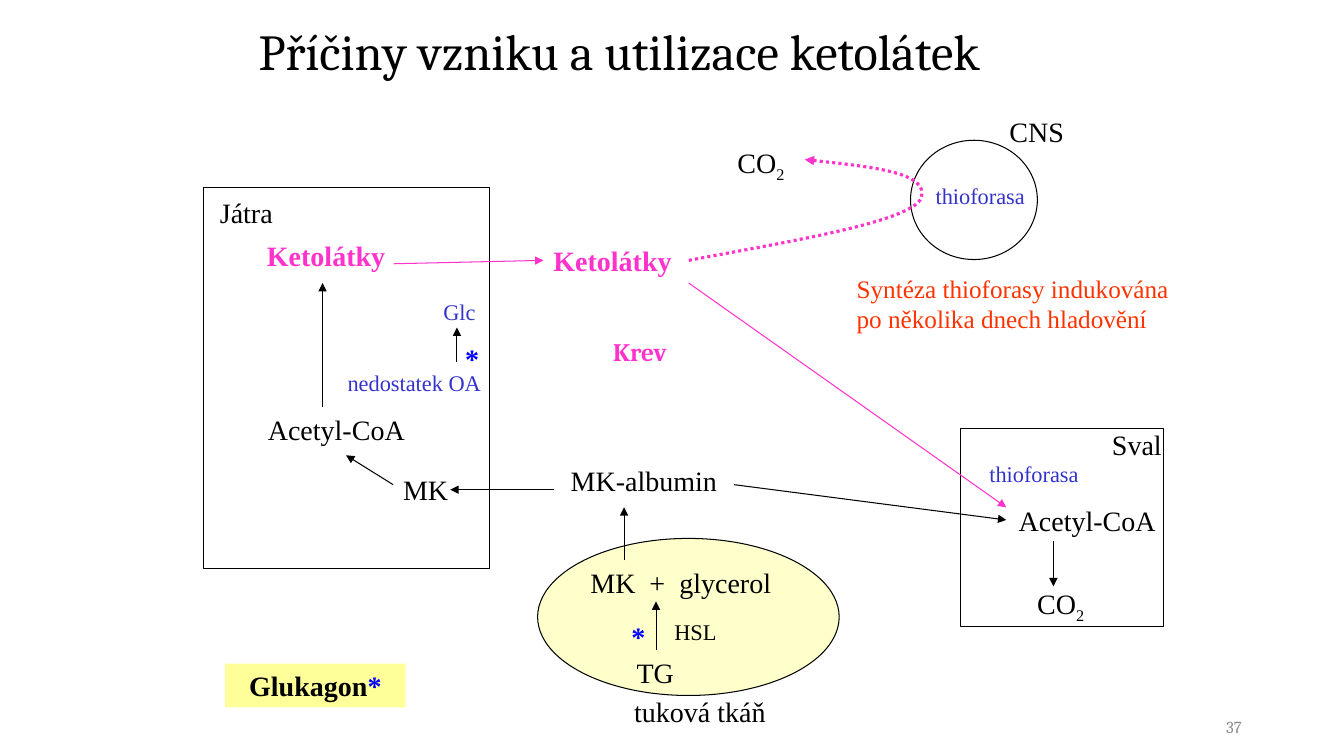
from dataclasses import dataclass
from itertools import chain
from typing import Optional

from lxml.etree import SubElement
from pptx import Presentation
from pptx.dml.color import RGBColor
from pptx.enum.dml import MSO_LINE
from pptx.enum.shapes import MSO_CONNECTOR, MSO_SHAPE
from pptx.enum.text import MSO_ANCHOR, MSO_AUTO_SIZE as AutoSize, PP_ALIGN as Align
from pptx.oxml.ns import qn
from pptx.util import Inches, Pt

COLUMNS, ROWS = 160, 90
CELL = Inches(7.5) / ROWS

BLACK = RGBColor(0x00, 0x00, 0x00)
GREY = RGBColor(0x8C, 0x8C, 0x8C)
PINK = RGBColor(0xFF, 0x33, 0xCC)
BLUE = RGBColor(0x00, 0x00, 0xFF)
INDIGO = RGBColor(0x33, 0x33, 0xCC)
ORANGE = RGBColor(0xFF, 0x33, 0x00)
CREAM = RGBColor(0xFF, 0xFF, 0xCC)
YELLOW = RGBColor(0xFF, 0xFF, 0x99)

SERIF, HEADING = "Times New Roman", "Cambria"
TOP, LEFT = 0, 1


@dataclass(frozen=True)
class Organ:
    outline: MSO_SHAPE
    column: float
    row: float
    columns: float
    rows: float
    fill: Optional[RGBColor] = None


@dataclass(frozen=True)
class Label:
    text: str
    column: float
    row: float
    columns: float
    size: int = 20
    color: RGBColor = BLACK
    bold: bool = False
    font: str = SERIF
    align: Align = Align.LEFT
    wrap: bool = False
    lines: int = 1
    subscript: str = ""

    @property
    def rows(self) -> float:
        return self.lines * self.size / 5 + 1.2


@dataclass(frozen=True)
class Arrow:
    start: tuple[float, float]
    end: tuple[float, float]
    color: RGBColor = BLACK
    source: Optional[Label] = None
    target: Optional[Label] = None


ORGANS = [
    Organ(MSO_SHAPE.RECTANGLE, 24.2, 22.3, 34.1, 45.4),
    Organ(MSO_SHAPE.RECTANGLE, 114.4, 51, 24.1, 23.6),
    Organ(MSO_SHAPE.OVAL, 108.4, 16.7, 15.1, 14.2),
    Organ(MSO_SHAPE.OVAL, 64, 64.1, 35.9, 18.7, CREAM),
]

BLOOD_KETONES = Label("Ketolátky", 64.7, 28.4, 16.6, color=PINK, bold=True)
TRIGLYCERIDES = Label("TG", 74.6, 77.4, 7)

LABELS = [
    Label("Játra", 25, 22.7, 13.2, wrap=True),
    Label("Ketolátky", 30.6, 27.8, 16.6, color=PINK, bold=True),
    Label("Glc", 51.6, 34.9, 7.1, 16, INDIGO, wrap=True),
    Label("*", 53, 40.1, 6.4, color=BLUE, bold=True, align=Align.CENTER, wrap=True),
    Label("nedostatek OA", 40.2, 43.3, 20.9, 16, INDIGO, wrap=True),
    Label("Acetyl-CoA", 30.7, 48.5, 18.8),
    Label("MK", 46.8, 55.6, 8.5, wrap=True),
    BLOOD_KETONES,
    Label("Krev", 71.8, 39.4, 9, 18, PINK, True, HEADING),
    Label("MK-albumin", 65.9, 54.6, 21.5, align=Align.CENTER, wrap=True),
    Label("CO", 86.6, 16.7, 8.3, subscript="2"),
    Label("CNS", 119, 13, 9),
    Label("thioforasa", 110.2, 21.1, 13.3, 16, INDIGO, wrap=True),
    Label("Syntéza thioforasy indukována po několika dnech hladovění",
          100.8, 31.9, 40.2, 18, ORANGE, wrap=True, lines=2),
    Label("Sval", 131.2, 50.3, 8.4),
    Label("thioforasa", 116.6, 54.2, 13.3, 16, INDIGO, wrap=True),
    Label("Acetyl-CoA", 120.1, 59.3, 18.8),
    Label("CO", 122.3, 69.2, 8.3, subscript="2"),
    Label("MK  +  glycerol", 69.1, 66.7, 24.1),
    Label("*", 72.8, 73.1, 6.4, color=BLUE, bold=True, align=Align.CENTER, wrap=True),
    Label("HSL", 75.7, 73, 14.2, 16, align=Align.CENTER, wrap=True),
    TRIGLYCERIDES,
    Label("tuková tkáň", 74.3, 82.1, 18.4),
]
GLUCAGON = Label("Glukagon", 26.8, 79, 21.5, bold=True, align=Align.CENTER, wrap=True)
PAGE_NUMBER = Label("37", 113, 84.7, 36, 12, GREY, font=HEADING,
                    align=Align.RIGHT, wrap=True)
TITLE = Label("Příčiny vzniku a utilizace ketolátek", 29.6, 2.3, 102, 36,
              font=HEADING, wrap=True)

ARROWS = [
    Arrow((46.9, 31.4), (64.7, 31.3), PINK, target=BLOOD_KETONES),
    Arrow((82, 33.7), (119.8, 60.4), PINK),
    Arrow((38.4, 48.5), (38.4, 33.7)),
    Arrow((54.4, 43.1), (54.4, 39)),
    Arrow((46.8, 57.7), (41.2, 54.2)),
    Arrow((65.9, 58.3), (53.6, 58.3)),
    Arrow((87.4, 57.7), (119.8, 61.9)),
    Arrow((74.3, 66.7), (74.3, 60.4)),
    Arrow((78.1, 77.3), (78.1, 71.6), source=TRIGLYCERIDES),
    Arrow((125.4, 64.4), (125.4, 69.8)),
]

BRAIN_PATH = [(82, 31), (92.4, 29), (108.7, 26.5), (109.7, 23.5),
              (110.5, 20.5), (103.1, 19.8), (95.8, 19)]


def cells(*counts: float) -> list[int]:
    return [round(count * CELL) for count in counts]


def format_run(run, label: Label, color: RGBColor) -> None:
    run.font.name = label.font
    run.font.size = Pt(label.size)
    run.font.bold = label.bold
    run.font.color.rgb = color


def write(shape, label: Label) -> None:
    frame = shape.text_frame
    frame.text = label.text
    frame.word_wrap = label.wrap
    frame.auto_size = AutoSize.SHAPE_TO_FIT_TEXT
    frame.vertical_anchor = MSO_ANCHOR.TOP
    paragraph = frame.paragraphs[0]
    paragraph.alignment = label.align
    if label.subscript:
        paragraph.add_run().text = label.subscript
    for run in paragraph.runs:
        format_run(run, label, label.color)
    if label.subscript:
        paragraph.runs[-1].font._element.set("baseline", "-25000")


def draw_organ(shapes, organ: Organ) -> None:
    shape = shapes.add_shape(
        organ.outline, *cells(organ.column, organ.row, organ.columns, organ.rows))
    shape.shadow.inherit = False
    if organ.fill is None:
        shape.fill.background()
    else:
        shape.fill.solid()
        shape.fill.fore_color.rgb = organ.fill
    shape.line.color.rgb = BLACK
    shape.line.width = Pt(0.75)


def draw_label(shapes, label: Label):
    box = shapes.add_textbox(*cells(label.column, label.row, label.columns, label.rows))
    write(box, label)
    return box


def style_arrow(shape, color: RGBColor, width: float) -> None:
    shape.line.color.rgb = color
    shape.line.width = Pt(width)
    outline = shape._element.spPr.find(qn("a:ln"))
    SubElement(outline, qn("a:tailEnd"), type="triangle")


def draw_arrow(shapes, arrow: Arrow, boxes: dict) -> None:
    line = shapes.add_connector(MSO_CONNECTOR.STRAIGHT, *cells(*arrow.start, *arrow.end))
    if arrow.source:
        line.begin_connect(boxes[arrow.source], TOP)
    if arrow.target:
        line.end_connect(boxes[arrow.target], LEFT)
    style_arrow(line, arrow.color, 0.75)
    SubElement(line._element.spPr, qn("a:effectLst"))


def draw_brain_path(shapes) -> None:
    """Draw the dotted curve, joining each three points into one Bézier segment."""
    start, *controls = [tuple(cells(*point)) for point in BRAIN_PATH]
    builder = shapes.build_freeform(*start)
    builder.add_line_segments(controls, close=False)
    curve = builder.convert_to_shape()
    steps = list(curve._element.iter(qn("a:lnTo")))
    for first in range(0, len(steps), 3):
        bezier = SubElement(steps[first].getparent(), qn("a:cubicBezTo"))
        trio = steps[first:first + 3]
        bezier.extend(list(chain.from_iterable(trio)))
        for step in trio:
            step.getparent().remove(step)
    curve.shadow.inherit = False
    curve.fill.background()
    curve.line.dash_style = MSO_LINE.ROUND_DOT
    style_arrow(curve, PINK, 2.25)


def draw_glucagon(shapes) -> None:
    badge = shapes.add_shape(MSO_SHAPE.RECTANGLE, *cells(
        GLUCAGON.column, GLUCAGON.row, GLUCAGON.columns, GLUCAGON.rows))
    badge.shadow.inherit = False
    badge.fill.solid()
    badge.fill.fore_color.rgb = YELLOW
    badge.line.fill.background()
    write(badge, GLUCAGON)
    star = badge.text_frame.paragraphs[0].add_run()
    star.text = "*"
    format_run(star, GLUCAGON, BLUE)


def main() -> None:
    deck = Presentation()
    deck.slide_width, deck.slide_height = cells(COLUMNS, ROWS)
    slide = deck.slides.add_slide(deck.slide_layouts[5])
    shapes = slide.shapes
    title = shapes.title
    title.left, title.top, title.width, title.height = cells(
        TITLE.column, TITLE.row, TITLE.columns, 8.3)
    write(title, TITLE)
    title.text_frame.auto_size = AutoSize.NONE
    title.text_frame.vertical_anchor = MSO_ANCHOR.MIDDLE
    title.text_frame.paragraphs[0].line_spacing = 0.9
    for organ in ORGANS:
        draw_organ(shapes, organ)
    boxes = {label: draw_label(shapes, label) for label in LABELS}
    for arrow in ARROWS:
        draw_arrow(shapes, arrow, boxes)
    draw_brain_path(shapes)
    draw_glucagon(shapes)
    draw_label(shapes, PAGE_NUMBER)
    deck.save("out.pptx")


if __name__ == "__main__":
    main()
